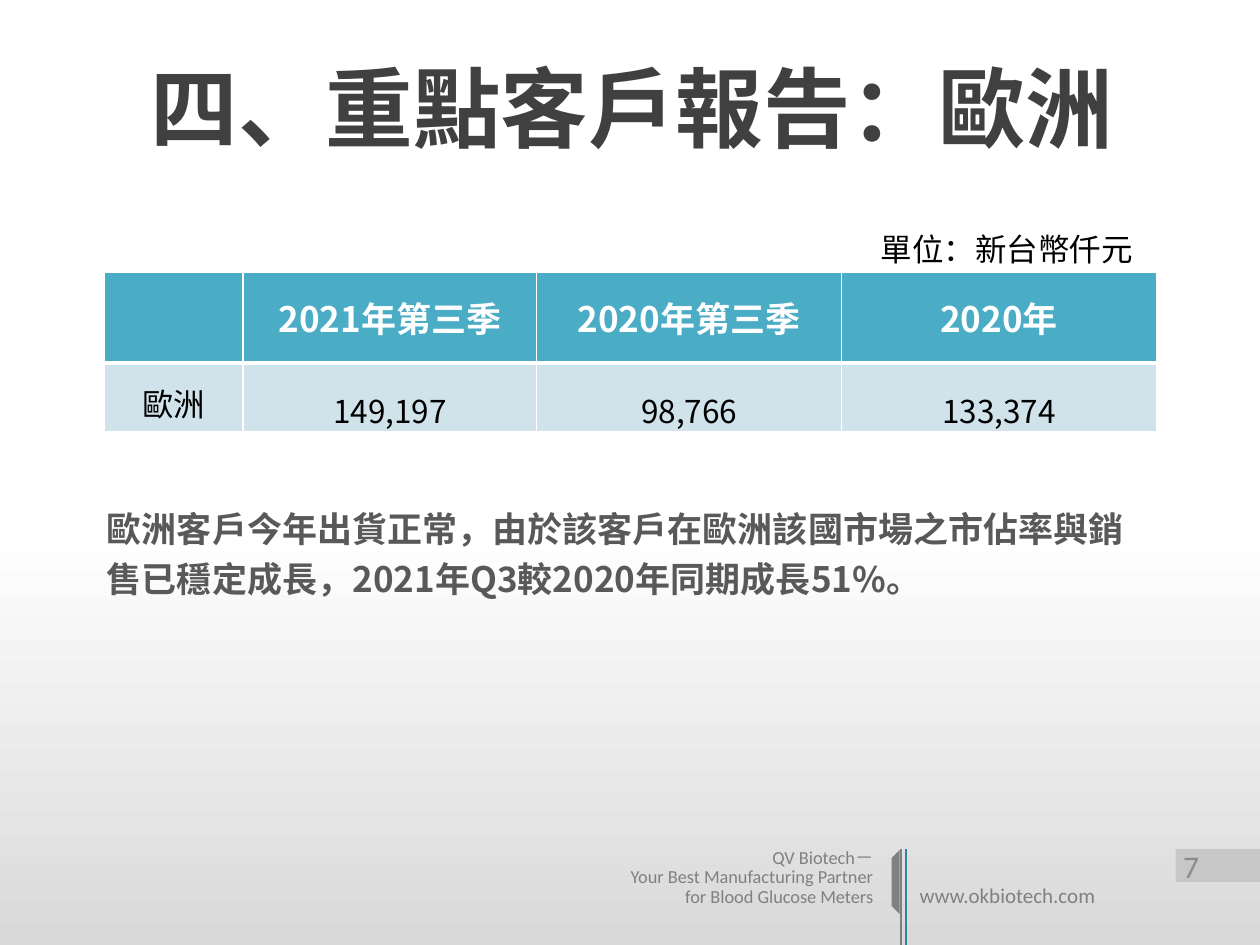
from typing import NamedTuple

from lxml.etree import SubElement
from pptx import Presentation
from pptx.dml.color import RGBColor
from pptx.enum.shapes import MSO_CONNECTOR, MSO_SHAPE
from pptx.enum.text import MSO_ANCHOR, PP_ALIGN
from pptx.oxml.ns import qn
from pptx.util import Inches, Pt

# The slide is a grid of 100 columns by 75 rows
COLS, ROWS = 100, 75
WIDE, HIGH = Inches(10), Inches(7.5)
SC, TC, LATIN = "Noto Sans CJK SC", "Noto Sans CJK TC", "Calibri"
GREY, WHITE = "808080", "FFFFFF"
MID = PP_ALIGN.CENTER


class Box(NamedTuple):
    left: float
    top: float
    width: float
    height: float


class Look(NamedTuple):
    size: float
    face: str
    tint: str
    bold: bool = False
    align: PP_ALIGN = PP_ALIGN.LEFT
    space: object = None


class Note(NamedTuple):
    box: Box
    lines: list[str]
    look: Look
    frame: dict = {}


class Rule(NamedTuple):
    col: float
    tint: str


def shade(tint: str) -> RGBColor:
    return RGBColor.from_string(tint)


def across(cols: float) -> int:
    return round(WIDE * cols / COLS)


def down(rows: float) -> int:
    return round(HIGH * rows / ROWS)


def place(box: Box) -> tuple[int, int, int, int]:
    return across(box.left), down(box.top), across(box.width), down(box.height)


def apply(thing, values: dict) -> None:
    for name, value in values.items():
        setattr(thing, name, value)


def write(frame, lines: list[str], look: Look) -> None:
    for i, line in enumerate(lines):
        para = frame.paragraphs[0] if i == 0 else frame.add_paragraph()
        apply(para, {"alignment": look.align, "line_spacing": look.space})
        run = para.add_run()
        run.text = line
        apply(run.font, {"size": Pt(look.size), "name": look.face, "bold": look.bold})
        run.font.color.rgb = shade(look.tint)
        # East Asian glyphs need their own font entry
        SubElement(run.font._element, qn("a:ea"), typeface=look.face)


def add_note(slide, note: Note) -> None:
    frame = slide.shapes.add_textbox(*place(note.box)).text_frame
    apply(frame, {"word_wrap": True} | note.frame)
    write(frame, note.lines, note.look)


def add_form(slide, kind: MSO_SHAPE, box: Box):
    form = slide.shapes.add_shape(kind, *place(box))
    form.shadow.inherit = False
    form.fill.solid()
    form.fill.fore_color.rgb = shade(GREY)
    form.line.fill.background()
    return form


def add_rule(slide, rule: Rule) -> None:
    x = across(rule.col)
    line = slide.shapes.add_connector(MSO_CONNECTOR.STRAIGHT, x, down(67.4), x, HIGH)
    line.line.width = Pt(1.5)
    line.line.color.rgb = shade(rule.tint)
    SubElement(line._element.spPr, qn("a:effectLst"))


def edge(cell, base: float) -> None:
    props = cell._tc.get_or_add_tcPr()
    sides = {"lnL": 1, "lnR": 1, "lnT": 1, "lnB": base}
    for i, (side, width) in enumerate(sides.items()):
        line = SubElement(props, qn(f"a:{side}"), w=str(Pt(width)))
        fill = SubElement(line, qn("a:solidFill"))
        SubElement(fill, qn("a:srgbClr"), val=WHITE)
        props.insert(i, line)


def add_grid(slide) -> None:
    rows = [["", "2021年第三季", "2020年第三季", "2020年"],
            ["歐洲", "149,197", "98,766", "133,374"]]
    styles = [
        ("4BACC6", Look(20, SC, WHITE, True, MID), MSO_ANCHOR.MIDDLE, 3),
        ("D0E3EA", Look(18, SC, "000000", False, MID), MSO_ANCHOR.BOTTOM, 1),
    ]
    tight = {"margin_left": Inches(0.01), "margin_right": Inches(0.01),
             "margin_top": Inches(0.01), "margin_bottom": 0}
    box = Box(8.3, 21.6, 83.5, 12.7)
    table = slide.shapes.add_table(2, 4, *place(box)).table
    for col, width in zip(table.columns, (11, 23.3, 24.2, 25)):
        col.width = across(width)
    for row, height in zip(table.rows, (7.2, 5.5)):
        row.height = down(height)
    for r, (words, (fill, look, anchor, base)) in enumerate(zip(rows, styles)):
        for c, word in enumerate(words):
            cell = table.cell(r, c)
            cell.fill.solid()
            cell.fill.fore_color.rgb = shade(fill)
            cell.vertical_anchor = anchor
            if r and c:
                apply(cell, tight)
            if word:
                write(cell.text_frame, [word], look)
            edge(cell, base)


def main() -> None:
    deck = Presentation()
    apply(deck, {"slide_width": WIDE, "slide_height": HIGH})
    slide = deck.slides.add_slide(deck.slide_layouts[6])

    # Background: white, fading to grey at the foot
    back = slide.background.fill
    back.gradient()
    back.gradient_angle = 270
    for stop, (spot, tint) in zip(back.gradient_stops, [(0.56, WHITE), (1, "D9D9D9")]):
        stop.position = spot
        stop.color.rgb = shade(tint)

    # Footer mark: two rules and a folded stripe
    add_rule(slide, Rule(71.5, GREY))
    stripe = add_form(slide, MSO_SHAPE.DIAGONAL_STRIPE, Box(69.6, 68.2, 3.6, 3.6))
    stripe.adjustments[0] = 0.75
    stripe.rotation = 225
    stripe._element.spPr.xfrm.set("flipH", "1")
    add_rule(slide, Rule(71.9, "31859C"))

    # Page number
    tab = add_form(slide, MSO_SHAPE.RECTANGLE, Box(93.3, 67.4, 6.7, 2.6))
    tint = tab.fill._xPr.find(qn("a:solidFill"))[0]
    SubElement(tint, qn("a:alpha"), val="25000")
    apply(tab.text_frame, {"margin_left": Inches(0.06), "margin_right": 0,
                           "margin_top": 0, "margin_bottom": 0,
                           "vertical_anchor": MSO_ANCHOR.MIDDLE})
    write(tab.text_frame, ["7"], Look(18, LATIN, "8C8C8C"))

    # Footer, title, unit and comment
    notes = [
        Note(Box(47.6, 66.9, 22.7, 5.6),
             ["QV Biotech－", "Your Best Manufacturing Partner",
              "for Blood Glucose Meters"],
             Look(10.5, LATIN, GREY, align=PP_ALIGN.RIGHT, space=Pt(11))),
        Note(Box(72, 70, 18.9, 2.6), ["www.okbiotech.com"],
             Look(12, LATIN, GREY, space=Pt(11))),
        Note(Box(6.3, 2.2, 87.8, 12.5), ["四、重點客戶報告：歐洲"],
             Look(50, SC, "404040", True, MID),
             {"vertical_anchor": MSO_ANCHOR.MIDDLE}),
        Note(Box(68.9, 17.8, 22.2, 4), ["單位：新台幣仟元"],
             Look(18, TC, "000000"), {"word_wrap": False}),
        Note(Box(7.5, 39.1, 84.1, 16.2),
             ["歐洲客戶今年出貨正常，由於該客戶在歐洲該國市場之市佔率與銷"
              "售已穩定成長，2021年Q3較2020年同期成長51%。"],
             Look(20, SC, "595959", True, space=1.2)),
    ]
    for note in notes:
        add_note(slide, note)

    add_grid(slide)
    deck.save("out.pptx")


if __name__ == "__main__":
    main()
